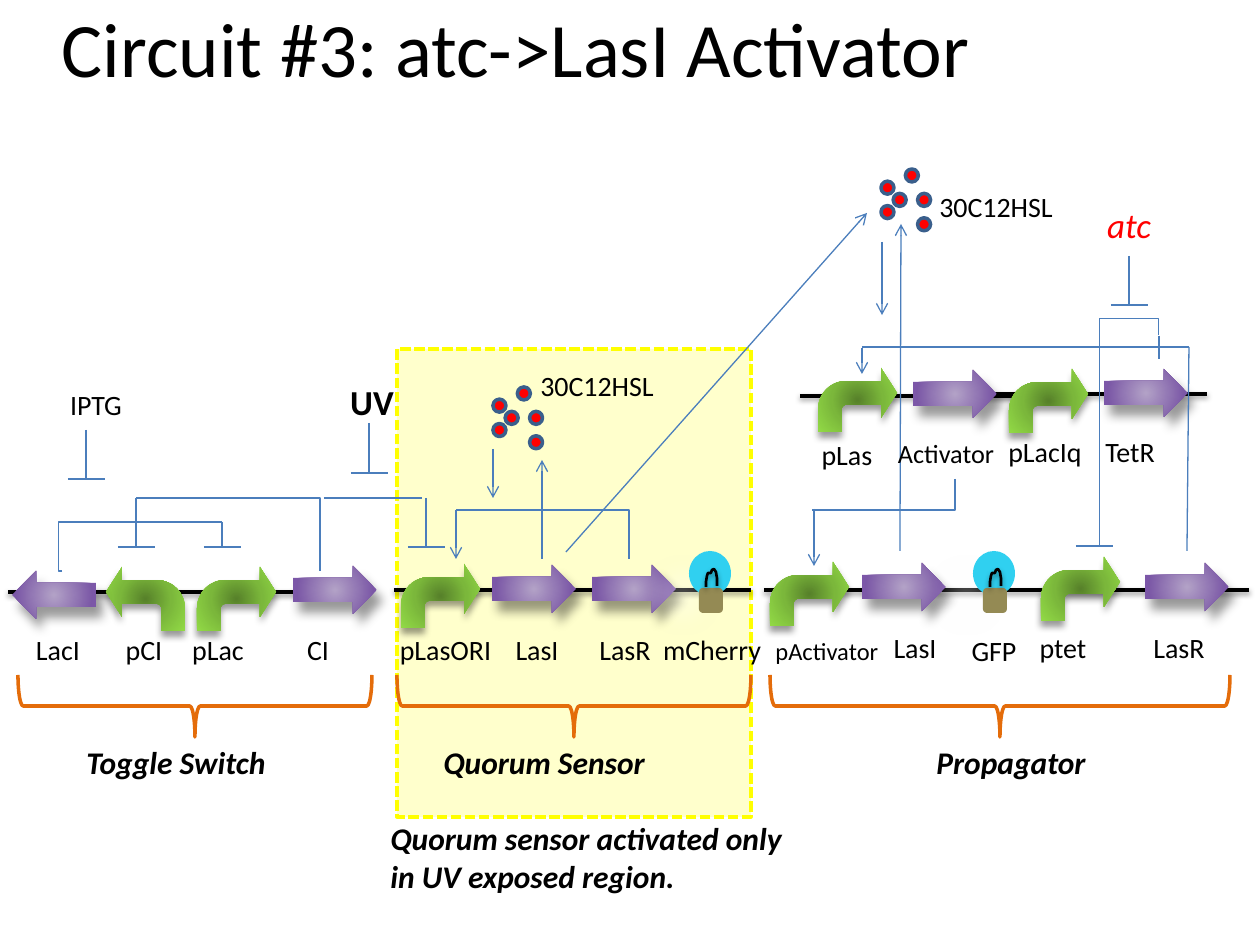
from dataclasses import dataclass

from lxml import etree
from pptx import Presentation
from pptx import util as u
from pptx.dml.color import RGBColor
from pptx.enum import dml, shapes, text
from pptx.oxml.ns import nsdecls, qn

EMU_PER_PX = 914400 / 126
SHAPE = shapes.MSO_SHAPE


def px(length):
    return u.Emu(round(length * EMU_PER_PX))


def add_xml(parent, xml):
    tag, rest = xml.split(" ", 1) if " " in xml.split(">", 1)[0] else (xml[:-2], "/>")
    node = etree.fromstring(f"{tag} {nsdecls('a')} {rest}")
    parent.append(node)
    return node


@dataclass(frozen=True)
class Theme:
    font: str = "Calibri"
    ink: str = "000000"
    alert: str = "FF0000"
    wire: str = "4B7EBC"
    brace: str = "E46C0A"
    region: str = "FFFF00"
    molecule_edge: str = "3A5F8C"
    bulb: str = "30D0F0"
    socket: str = "948A54"
    promoter: tuple = ((0, "57812A"), (50, "7BB73B"), (100, "92DA46"))
    gene: tuple = ((0, "B3A2C7"), (80, "7B58A6"), (100, "7C57A8"))
    # shadows: colour, opacity %, blur pt, distance pt, direction
    line_shadow: tuple = ("000000", 38, 3.1, 1.6, 90)
    promoter_shadow: tuple = ("000000", 40, 4, 3, 90)
    gene_shadow: tuple = ("000000", 40, 6, 7, 60)
    bulb_shadow: tuple = ("FFFFFF", 28, 11.8, 19.7, 141)
    title: int = 44
    large: int = 20
    caption: int = 18
    label: int = 16


class Diagram:
    def __init__(self, slide, theme):
        self.slide, self.theme = slide, theme

    def effects(self, item, shadow=None):
        """Replace any inherited shadow with the given one, or with none."""
        effect = add_xml(item._element.spPr, "<a:effectLst/>")
        if shadow:
            color, opacity, blur, distance, angle = shadow
            add_xml(effect, f'<a:outerShdw blurRad="{u.Pt(blur)}" dist="{u.Pt(distance)}" '
                    f'dir="{angle * 60000}" algn="ctr" rotWithShape="0"><a:srgbClr val="{color}">'
                    f'<a:alpha val="{opacity * 1000}"/></a:srgbClr></a:outerShdw>')

    def outline(self, item, color, width):
        item.line.color.rgb = RGBColor.from_string(color)
        item.line.width = u.Pt(width)

    def block(self, kind, box, fill=None, line=None, shadow=None, turn=0, opacity=100):
        """Place a preset so that it covers box once turned."""
        left, top, width, height = box
        if turn % 180:
            left, top = left + (width - height) / 2, top + (height - width) / 2
            width, height = height, width
        item = self.slide.shapes.add_shape(kind, *map(px, (left, top, width, height)))
        item.rotation = turn
        if isinstance(fill, str):
            item.fill.solid()
            item.fill.fore_color.rgb = RGBColor.from_string(fill)
            if opacity < 100:
                color = item._element.spPr.find(qn("a:solidFill"))[0]
                add_xml(color, f'<a:alpha val="{opacity * 1000}"/>')
        elif fill:
            stops = "".join(f'<a:gs pos="{at * 1000}"><a:srgbClr val="{color}"/></a:gs>'
                            for at, color in fill)
            add_xml(item._element.spPr, f'<a:gradFill rotWithShape="1"><a:gsLst>{stops}</a:gsLst>'
                    '<a:path path="circle"><a:fillToRect l="50000" t="50000" r="50000" b="50000"/>'
                    '</a:path></a:gradFill>')
        else:
            item.fill.background()
        if line:
            self.outline(item, *line)
        else:
            item.line.fill.background()
        self.effects(item, shadow)
        return item

    def region(self, *box):
        area = self.block(SHAPE.RECTANGLE, box, self.theme.region,
                          (self.theme.region, 2), opacity=20)
        area.line.dash_style = dml.MSO_LINE.SQUARE_DOT

    def gene(self, left, top, turn=270):
        self.block(SHAPE.DOWN_ARROW, (left, top, 84, 48), self.theme.gene,
                   shadow=self.theme.gene_shadow, turn=turn)

    def promoter(self, left, top, mirrored=False):
        arrow = self.block(SHAPE.BENT_ARROW, (left, top, 79, 64), self.theme.promoter,
                           shadow=self.theme.promoter_shadow)
        for index, value in enumerate((0.37, 0.39, 0.25, 0.44)):
            arrow.adjustments[index] = value
        if mirrored:
            arrow._element.spPr.xfrm.set("flipH", "1")

    def brace(self, left, top, width):
        self.block(SHAPE.LEFT_BRACE, (left, top, width, 62),
                   line=(self.theme.brace, 2), turn=270)

    def molecules(self, left, top):
        for column, row in ((1, 2), (3, 4), (3, 2), (2, 0), (0, 1), (0, 3)):
            self.block(SHAPE.OVAL, (left + 12.2 * column, top + 12.2 * row, 13, 13),
                       self.theme.alert, (self.theme.molecule_edge, 2))

    def reporter(self, left, top):
        """Light bulb that marks a fluorescent protein."""
        self.block(SHAPE.OVAL, (left, top, 42, 45), self.theme.bulb,
                   shadow=self.theme.bulb_shadow)
        self.block(SHAPE.ROUNDED_RECTANGLE, (left + 10, top + 37, 24, 25), self.theme.socket)
        curve = ((0, 19), (0, 14), (1, 8), (2, 5), (5, 5), (6, 2), (8, 1), (10, 4), (11, 10), (11, 18))
        points = [(left + 17 + x, top + 17 + y) for x, y in curve]
        builder = self.slide.shapes.build_freeform(*points[0], scale=EMU_PER_PX)
        builder.add_line_segments(points[1:], close=False)
        filament = builder.convert_to_shape()
        filament.fill.background()
        self.outline(filament, self.theme.ink, 1.5)
        self.effects(filament, self.theme.line_shadow)

    def wire(self, x1, y1, x2, y2, width=0.75, arrow=False, bend=None, turn=0):
        """Straight line, or an elbow when bend gives where it turns."""
        kind = shapes.MSO_CONNECTOR.STRAIGHT if bend is None else shapes.MSO_CONNECTOR.ELBOW
        item = self.slide.shapes.add_connector(kind, *map(px, (x1, y1, x2, y2)))
        self.outline(item, self.theme.wire, width)
        properties = item._element.spPr
        if bend is not None:
            guides = properties.find(qn("a:prstGeom")).get_or_add_avLst()
            add_xml(guides, f'<a:gd name="adj1" fmla="val {round(bend * 100000)}"/>')
        if turn:
            properties.xfrm.set("rot", str(turn * 60000))
        if arrow:
            add_xml(properties.find(qn("a:ln")), '<a:tailEnd type="arrow"/>')
        self.effects(item)

    def inhibition(self, x, top, bottom, width=0.75):
        self.wire(x, top, x, bottom, width)
        self.wire(x - 18, bottom, x + 19, bottom, width)

    def strand(self, x1, x2, y):
        item = self.slide.shapes.add_connector(
            shapes.MSO_CONNECTOR.STRAIGHT, *map(px, (x1, y, x2, y)))
        self.outline(item, self.theme.ink, 2)
        self.effects(item, self.theme.line_shadow)

    def words(self, content, left, top, width, height=42, size=None, color=None,
              align=text.PP_ALIGN.CENTER, anchor=text.MSO_ANCHOR.TOP, **style):
        frame = self.slide.shapes.add_textbox(*map(px, (left, top, width, height))).text_frame
        frame.word_wrap, frame.vertical_anchor = True, anchor
        line = frame.paragraphs[0]
        line.alignment = align
        run = line.add_run()
        run.text = content
        run.font.color.rgb = RGBColor.from_string(color or self.theme.ink)
        style |= {"name": self.theme.font, "size": u.Pt(size or self.theme.label)}
        for key, value in style.items():
            setattr(run.font, key, value)

    def caption(self, content, left, top, width=307, height=62):
        self.words(content, left, top, width, height, self.theme.caption,
                   align=text.PP_ALIGN.LEFT, bold=True, italic=True)


def main():
    deck = Presentation()
    deck.slide_width, deck.slide_height = u.Inches(10), u.Inches(7.5)
    theme = Theme()
    circuit = Diagram(deck.slides.add_slide(deck.slide_layouts[6]), theme)

    circuit.words("Circuit #3: atc->LasI Activator ", -42, -32, 1134, 158, theme.title,
                  anchor=text.MSO_ANCHOR.MIDDLE)
    circuit.region(397, 349, 354, 468)
    for strand in ((394, 751, 590), (8, 365, 592), (764, 1249, 590), (992, 1207, 394), (800, 1016, 396)):
        circuit.strand(*strand)
    for promoter in ((197, 567), (401, 564), (106, 567, True), (770, 562),
                     (1041, 557), (1009, 369), (818, 368)):
        circuit.promoter(*promoter)
    for gene in ((492, 565), (12, 571, 90), (293, 566), (592, 565), (862, 563),
                 (1145, 563), (1104, 369), (913, 370)):
        circuit.gene(*gene)
    for left in (689, 973):
        circuit.reporter(left, 551)
    for cluster in ((493, 387), (881, 169)):
        circuit.molecules(*cluster)

    for stem in ((136, 498, 547), (222, 522, 547), (426, 498, 547), (369, 423, 473, 1.5),
                 (86, 430, 479), (1129, 256, 305)):
        circuit.inhibition(*stem)
    for elbow in ((320, 571, 136, 498), (62, 571, 222, 522), (629, 559, 456, 510), (955, 479, 812, 510)):
        circuit.wire(*elbow, bend=-0.02 if elbow[0] == 62 else 0)
    circuit.wire(1024, 411, 1234, 470, bend=-0.08, turn=90)
    for link in ((324, 498, 422, 498), (862, 347, 1189, 347), (1189, 347, 1187, 551),
                 (1159, 336, 1159, 359), (1076, 546, 1113, 546), (814, 509, 814, 557)):
        circuit.wire(*link)
    for signal in ((456, 510, 456, 559), (493, 449, 493, 498), (542, 559, 542, 460),
                   (862, 348, 862, 374), (566, 552, 867, 213), (900, 551, 901, 224),
                   (882, 242, 882, 315), (814, 517, 814, 566)):
        circuit.wire(*signal, arrow=True)

    for label in (("CI", 246, 626, 144), ("pLasORI", 382, 626, 127), ("LasI", 465, 626, 144),
                  ("LasR", 567, 626, 116), ("mCherry", 640, 626, 144), ("LacI", 0, 626, 116),
                  ("pLac", 160, 626, 116), ("pCI", 86, 626, 116), ("30C12HSL", 525, 362, 144),
                  ("30C12HSL", 924, 183, 144), ("IPTG", 24, 381, 144),
                  ("pActivator", 751, 630, 152, 42, 14), ("LasI", 843, 624, 144),
                  ("LasR", 1121, 624, 116), ("GFP", 922, 627, 144), ("ptet", 1005, 624, 116),
                  ("TetR", 1058, 428, 144), ("pLacIq", 987, 428, 116), ("pLas", 789, 431, 116),
                  ("Activator", 874, 431, 144, 42, 15)):
        circuit.words(*label)
    circuit.words("UV", 300, 374, 144, 49, theme.large, bold=True)
    circuit.words("atc", 1057, 197, 144, 55, theme.large, theme.alert, italic=True)

    for left, width in ((18, 354), (397, 354), (770, 460)):
        circuit.brace(left, 675, width)
    for name, left in (("Toggle Switch", 74), ("Quorum Sensor", 431), ("Propagator", 924)):
        circuit.caption(name, left, 737)
    circuit.caption("Quorum sensor activated only in UV exposed region.", 378, 813, 432, 81)
    deck.save("out.pptx")


if __name__ == "__main__":
    main()
